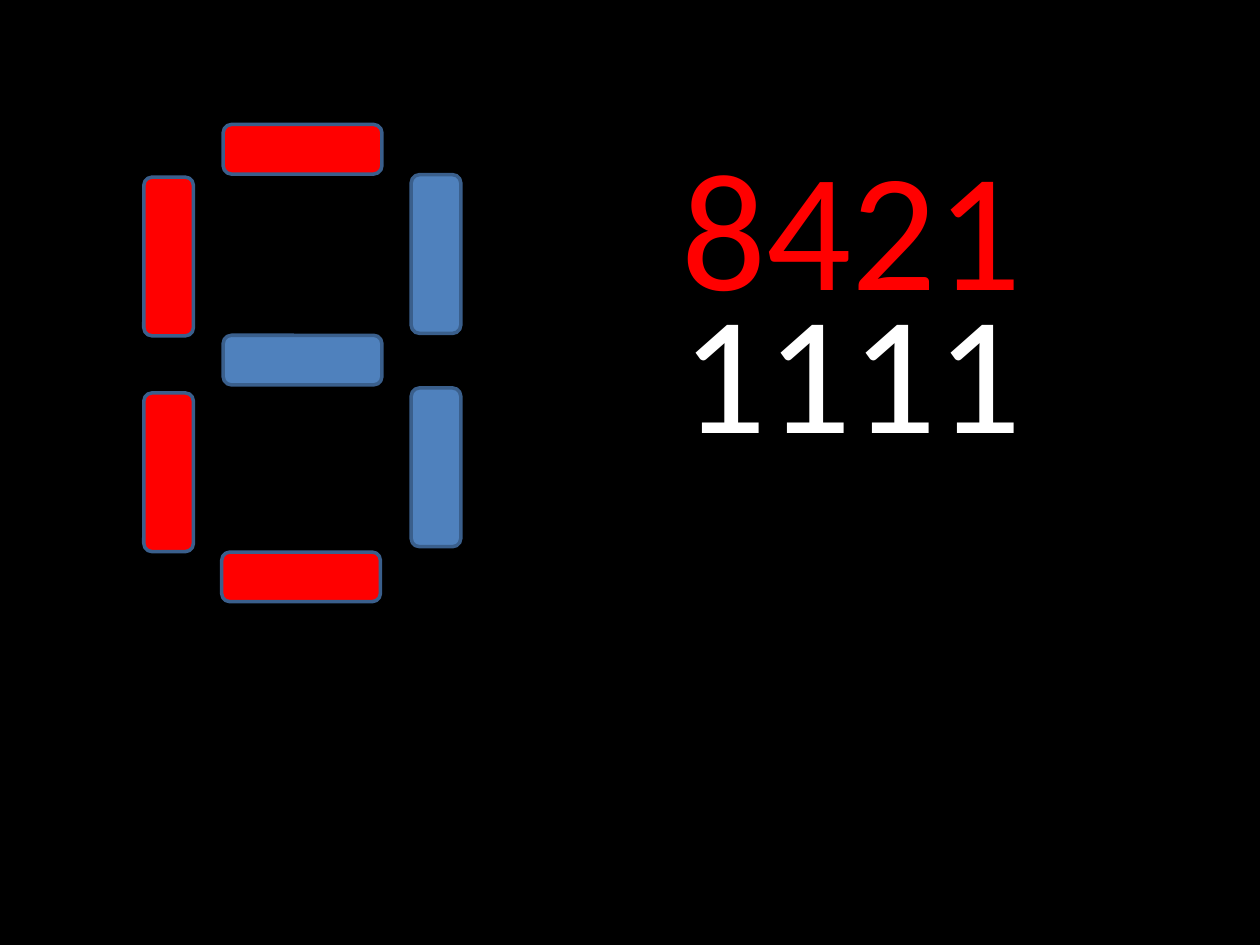
from pptx import Presentation
from pptx.dml.color import RGBColor
from pptx.enum.shapes import MSO_SHAPE
from pptx.util import Cm, Pt

BLACK = RGBColor(0x00, 0x00, 0x00)
WHITE = RGBColor(0xFF, 0xFF, 0xFF)
RED = RGBColor(0xFF, 0x00, 0x00)
BLUE = RGBColor(0x4F, 0x81, 0xBD)
OUTLINE = RGBColor(0x3A, 0x5F, 0x8C)

SEGMENT_LENGTH, SEGMENT_THICKNESS = 3.2, 1.0

# Seven-segment display: left, top (before rotation, cm), rotation, colour
SEGMENTS = [
    (4.5, 2.51, 0, RED),
    (4.5, 6.76, 0, BLUE),
    (4.47, 11.13, 0, RED),
    (7.19, 8.92, 270, BLUE),
    (1.8, 9.02, 270, RED),
    (7.19, 4.62, 270, BLUE),
    (1.8, 4.67, 270, RED),
]

# Text, top and height (cm), colour
NUMBERS = [
    ("8421", 2.34, 8.46, RED),
    ("1111", 5.23, 4.37, WHITE),
]
NUMBER_LEFT, NUMBER_WIDTH = 13.49, 9.8


def add_segment(slide, left, top, rotation, color):
    s = slide.shapes.add_shape(
        MSO_SHAPE.ROUNDED_RECTANGLE, Cm(left), Cm(top),
        Cm(SEGMENT_LENGTH), Cm(SEGMENT_THICKNESS))
    s.rotation = rotation
    s.shadow.inherit = False
    s.fill.solid()
    s.fill.fore_color.rgb = color
    s.line.color.rgb = OUTLINE
    s.line.width = Pt(2)


def add_number(slide, text, top, height, color):
    tf = slide.shapes.add_textbox(
        Cm(NUMBER_LEFT), Cm(top), Cm(NUMBER_WIDTH), Cm(height)).text_frame
    tf.word_wrap = True
    tf.text = text
    font = tf.paragraphs[0].runs[0].font
    font.name = "Calibri"
    font.size = Pt(96)
    font.color.rgb = color


def main():
    prs = Presentation()
    prs.slide_width, prs.slide_height = Cm(25.4), Cm(19.05)
    slide = prs.slides.add_slide(prs.slide_layouts[6])
    slide.background.fill.solid()
    slide.background.fill.fore_color.rgb = BLACK
    for segment in SEGMENTS:
        add_segment(slide, *segment)
    for number in NUMBERS:
        add_number(slide, *number)
    prs.save("out.pptx")


if __name__ == "__main__":
    main()
